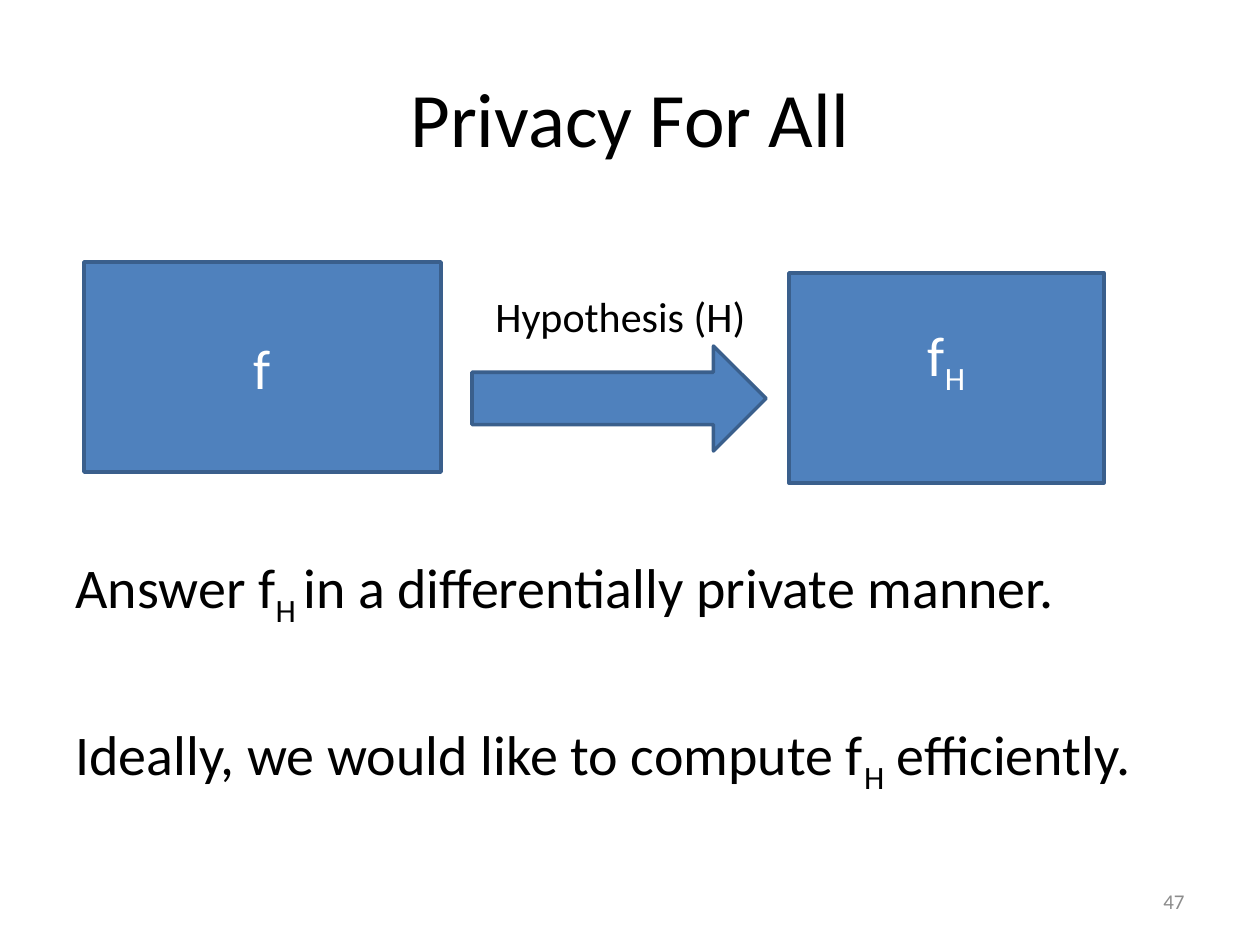
from pptx import Presentation
from pptx.dml.color import RGBColor
from pptx.enum.shapes import MSO_SHAPE as SHAPE
from pptx.enum.text import MSO_ANCHOR as ANCHOR, PP_ALIGN as ALIGN
from pptx.util import Pt

PX = 914400 / 126
FONT = "Calibri"
BLACK = RGBColor(0x00, 0x00, 0x00)
WHITE = RGBColor(0xFF, 0xFF, 0xFF)
GRAY = RGBColor(0x8C, 0x8C, 0x8C)
BLUE = RGBColor(0x4F, 0x81, 0xBD)
NAVY = RGBColor(0x3A, 0x5F, 0x8C)

# Content: a paragraph is a list of runs, alternating normal and subscript
TITLE = [["Privacy For All"]]
BODY = [
    ["Answer f", "H ", "in a differentially private manner."],
    ["Ideally, we would like to compute f", "H", " efficiently."],
]
LABEL = [["Hypothesis (H)"]]
NUMBER = [["47"]]

# Preset, box in px, paragraphs, extra bottom margin in points
SHAPES = [
    (SHAPE.RECTANGLE, (84, 262, 357, 210), [["f"]], 0),
    (SHAPE.RIGHT_ARROW, (472, 346, 294, 105), [], 0),
    (SHAPE.RECTANGLE, (789, 273, 315, 210), [["f", "H"]], 22),
]


def px(*values):
    return [round(v * PX) for v in values]


def write(sp, paragraphs, size=32, color=BLACK, align=ALIGN.LEFT,
          anchor=ANCHOR.TOP, wrap=True, before=0, gap=0):
    tf = sp.text_frame
    tf.word_wrap = wrap
    tf.vertical_anchor = anchor
    for i, runs in enumerate(paragraphs):
        p = tf.add_paragraph() if i else tf.paragraphs[0]
        p.alignment = align
        p.space_before = Pt(gap if i else before)
        for j, text in enumerate(runs):
            r = p.add_run()
            r.text = text
            r.font.name = FONT
            r.font.size = Pt(size)
            r.font.color.rgb = color
            if j % 2:
                r.font._element.set("baseline", "-25000")


prs = Presentation()
prs.slide_width, prs.slide_height = px(1260, 945)
slide = prs.slides.add_slide(prs.slide_layouts[5])

# Title
title = slide.shapes.title
title.left, title.top, title.width, title.height = px(63, 38, 1134, 158)
write(title, TITLE, size=44, align=ALIGN.CENTER, anchor=ANCHOR.MIDDLE)

# Statements
body = slide.shapes.add_textbox(*px(63, 546, 1134, 299))
write(body, BODY, before=6, gap=52)

# Function boxes and the arrow between them
for preset, box, paragraphs, extra in SHAPES:
    sp = slide.shapes.add_shape(preset, *px(*box))
    sp.shadow.inherit = False
    sp.fill.solid()
    sp.fill.fore_color.rgb = BLUE
    sp.line.color.rgb = NAVY
    sp.line.width = Pt(2)
    sp.text_frame.margin_bottom += Pt(extra)
    write(sp, paragraphs, color=WHITE, align=ALIGN.CENTER, anchor=ANCHOR.MIDDLE)

# Arrow label
label = slide.shapes.add_textbox(*px(483, 284, 278, 63))
write(label, LABEL, size=24, wrap=False)

# Slide number
number = slide.shapes.add_textbox(*px(903, 876, 294, 50))
write(number, NUMBER, size=12, color=GRAY, align=ALIGN.RIGHT, anchor=ANCHOR.MIDDLE)

prs.save("out.pptx")
